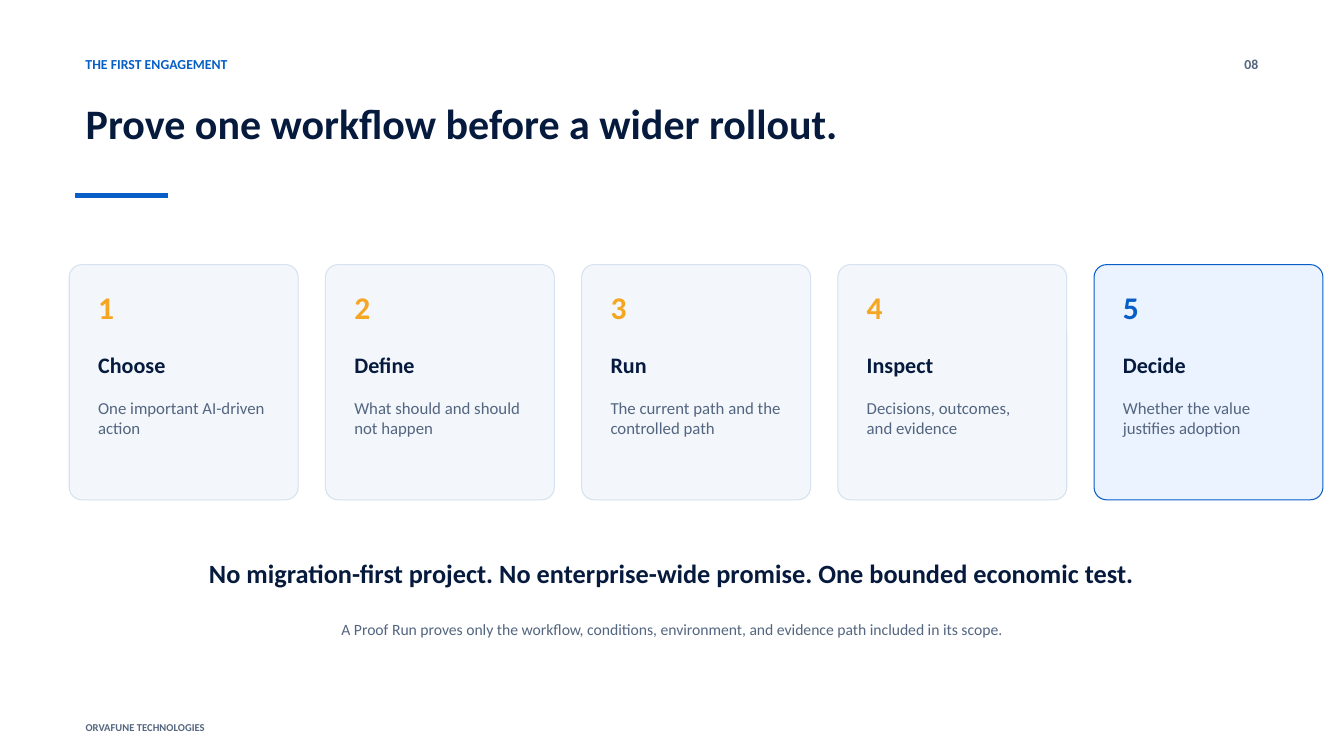
from typing import NamedTuple

from pptx import Presentation
from pptx.dml.color import RGBColor
from pptx.enum import shapes, text
from pptx.util import Pt

PX = 9525  # EMU in one px, at 96 px to the inch
FONT = "Calibri"
LEFT, CENTER, RIGHT = (
    text.PP_ALIGN.LEFT, text.PP_ALIGN.CENTER, text.PP_ALIGN.RIGHT)

WHITE = RGBColor(0xFF, 0xFF, 0xFF)
NAVY = RGBColor(0x06, 0x1A, 0x3D)
BLUE = RGBColor(0x07, 0x5E, 0xC7)
SLATE = RGBColor(0x53, 0x65, 0x7F)
AMBER = RGBColor(0xF5, 0xA6, 0x23)
PALE = RGBColor(0xF3, 0xF7, 0xFC)
EDGE = RGBColor(0xD7, 0xE1, 0xEF)
SKY = RGBColor(0xEA, 0xF3, 0xFF)


class Box(NamedTuple):
    x: int
    y: int
    w: int
    h: int

    def emu(self) -> list[int]:
        return [side * PX for side in self]


class Style(NamedTuple):
    size: float
    color: RGBColor
    bold: bool = True
    align: text.PP_ALIGN = LEFT


class Label(NamedTuple):
    words: str
    box: Box
    style: Style


class Look(NamedTuple):
    fill: RGBColor
    line: RGBColor
    number: RGBColor


class Step(NamedTuple):
    name: str
    detail: str
    look: Look


PLAIN = Look(PALE, EDGE, AMBER)
FINAL = Look(SKY, BLUE, BLUE)

STEPS = [
    Step("Choose", "One important AI-driven action", PLAIN),
    Step("Define", "What should and should not happen", PLAIN),
    Step("Run", "The current path and the controlled path", PLAIN),
    Step("Inspect", "Decisions, outcomes, and evidence", PLAIN),
    Step("Decide", "Whether the value justifies adoption", FINAL),
]
CARD = Box(66, 252, 218, 224)
PITCH = 244
INSET = 18

TITLE = Label("Prove one workflow before a wider rollout.",
              Box(72, 88, 1136, 92), Style(30, NAVY))
LABELS = [
    Label("THE FIRST ENGAGEMENT", Box(72, 48, 760, 24), Style(9.8, BLUE)),
    Label("08", Box(1160, 48, 48, 24), Style(9.8, SLATE, align=RIGHT)),
    Label("No migration-first project. No enterprise-wide promise. "
          "One bounded economic test.",
          Box(100, 526, 1080, 46), Style(18.8, NAVY, align=CENTER)),
    Label("A Proof Run proves only the workflow, conditions, environment, "
          "and evidence path included in its scope.",
          Box(148, 586, 984, 40), Style(11.2, SLATE, False, CENTER)),
    Label("ORVAFUNE TECHNOLOGIES", Box(72, 682, 420, 18), Style(7.5, SLATE)),
]


def write(shape, label: Label) -> None:
    """Fill a text shape with one styled run."""
    frame = shape.text_frame
    frame.word_wrap = True
    frame.auto_size = text.MSO_AUTO_SIZE.NONE
    frame.vertical_anchor = text.MSO_ANCHOR.TOP
    para = frame.paragraphs[0]
    para.alignment = label.style.align
    run = para.add_run()
    run.text = label.words
    run.font.name = FONT
    run.font.size = Pt(label.style.size)
    run.font.bold = label.style.bold
    run.font.color.rgb = label.style.color


def add_title(slide, label: Label) -> None:
    title = slide.shapes.title
    title.left, title.top, title.width, title.height = label.box.emu()
    write(title, label)


def add_label(slide, label: Label) -> None:
    write(slide.shapes.add_textbox(*label.box.emu()), label)


def add_panel(slide, kind: shapes.MSO_SHAPE, box: Box, fill: RGBColor,
              line: RGBColor, width: float):
    panel = slide.shapes.add_shape(kind, *box.emu())
    panel.shadow.inherit = False
    panel.fill.solid()
    panel.fill.fore_color.rgb = fill
    panel.line.color.rgb = line
    panel.line.width = Pt(width)
    return panel


def add_step(slide, index: int, step: Step) -> None:
    card = CARD._replace(x=CARD.x + index * PITCH)
    look = step.look
    panel = add_panel(slide, shapes.MSO_SHAPE.ROUNDED_RECTANGLE, card,
                      look.fill, look.line, 0.75)
    panel.adjustments[0] = 0.055
    x, y, w = card.x + INSET, card.y, card.w - 2 * INSET
    for label in (
        Label(str(index + 1), Box(x, y + 18, 42, 42),
              Style(22.5, look.number)),
        Label(step.name, Box(x, y + 78, w, 30), Style(15.8, NAVY)),
        Label(step.detail, Box(x, y + 122, w, 72), Style(12, SLATE, False)),
    ):
        add_label(slide, label)


def main() -> None:
    deck = Presentation()
    deck.slide_width, deck.slide_height = 1280 * PX, 720 * PX
    slide = deck.slides.add_slide(deck.slide_layouts.get_by_name("Title Only"))
    slide.background.fill.solid()
    slide.background.fill.fore_color.rgb = WHITE
    add_title(slide, TITLE)
    add_panel(slide, shapes.MSO_SHAPE.RECTANGLE, Box(72, 184, 88, 4),
              BLUE, BLUE, 0)
    for index, step in enumerate(STEPS):
        add_step(slide, index, step)
    for label in LABELS:
        add_label(slide, label)
    deck.save("out.pptx")


if __name__ == "__main__":
    main()
